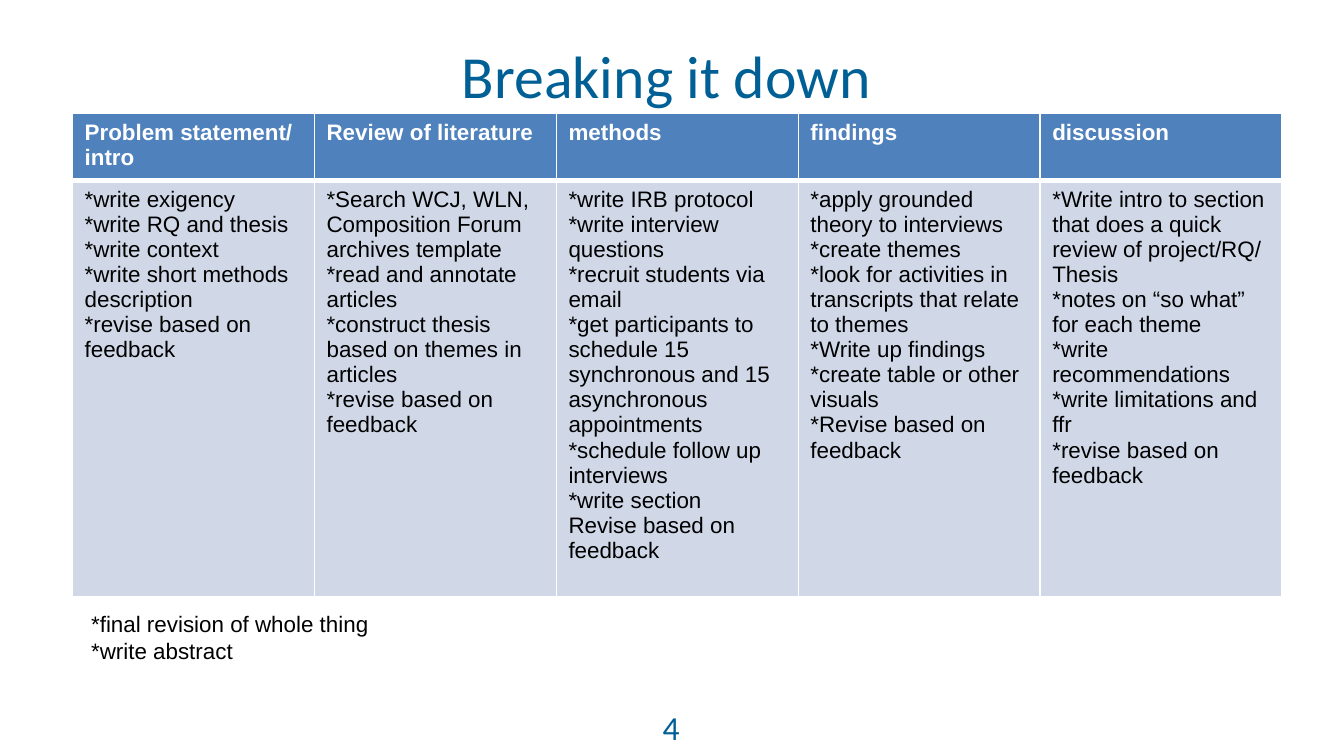
"""Build the "Breaking it down" slide with a table of writing tasks by section."""
import lxml.etree
import pptx
import pptx.dml.color
import pptx.enum.text
import pptx.oxml.ns
import pptx.util

Inches = pptx.util.Inches
COLORS = {
    "title": "006096",
    "header": "4F81BD",
    "body": "D0D8E8",
    "white": "FFFFFF",
    "black": "000000",
}
SECTIONS = [
    (["Problem statement/", "intro"],
     ["*write exigency", "*write RQ and thesis", "*write context",
      "*write short methods description", "*revise based on feedback"]),
    (["Review of literature"],
     ["*Search WCJ, WLN, Composition Forum archives template",
      "*read and annotate articles",
      "*construct thesis based on themes in articles",
      "*revise based on feedback"]),
    (["methods"],
     ["*write IRB protocol", "*write interview questions",
      "*recruit students via email",
      "*get participants to schedule 15 synchronous and 15 asynchronous appointments",
      "*schedule follow up interviews", "*write section",
      "Revise based on feedback"]),
    (["findings"],
     ["*apply grounded theory to interviews", "*create themes",
      "*look for activities in transcripts that relate to themes",
      "*Write up findings", "*create table or other visuals",
      "*Revise based on feedback"]),
    (["discussion"],
     ["*Write intro to section that does a quick review of project/RQ/", "Thesis",
      "*notes on “so what” for each theme", "*write recommendations",
      "*write limitations and ffr", "*revise based on feedback"]),
]


def write_lines(text_frame, lines, size, font_name, color, bold=False):
    text_frame.word_wrap = True
    text_frame.text = "\n".join(lines)
    for paragraph in text_frame.paragraphs:
        paragraph.font.size = pptx.util.Pt(size)
        paragraph.font.name = font_name
        paragraph.font.bold = bold
        paragraph.font.color.rgb = pptx.dml.color.RGBColor.from_string(COLORS[color])


def set_borders(cell, widths):
    properties = cell._tc.get_or_add_tcPr()
    for index, (side, width) in enumerate(widths.items()):
        line = lxml.etree.Element(pptx.oxml.ns.qn(f"a:ln{side}"), w=str(pptx.util.Pt(width)))
        fill = lxml.etree.SubElement(line, pptx.oxml.ns.qn("a:solidFill"))
        lxml.etree.SubElement(fill, pptx.oxml.ns.qn("a:srgbClr"), val=COLORS["white"])
        properties.insert(index, line)


presentation = pptx.Presentation()
presentation.slide_width = Inches(10)
presentation.slide_height = Inches(10) * 9 // 16
slide = presentation.slides.add_slide(presentation.slide_layouts[6])

title = slide.shapes.add_textbox(Inches(0.46), Inches(0.26), Inches(9), Inches(0.59))
write_lines(title.text_frame, ["Breaking it down"], 32, "Calibri", "title")
title.text_frame.vertical_anchor = pptx.enum.text.MSO_ANCHOR.MIDDLE

table = slide.shapes.add_table(
    2, len(SECTIONS), Inches(0.54), Inches(0.84), Inches(9), Inches(3.37)
).table
table.rows[0].height = Inches(0.47)
table.rows[1].height = Inches(2.9)
ROW_STYLES = [
    ("header", "white", True, {"L": 1, "R": 1, "T": 1, "B": 3}),
    ("body", "black", False, {"L": 1, "R": 1, "T": 3, "B": 1}),
]
for column, section in enumerate(SECTIONS):
    table.columns[column].width = Inches(1.8)
    for row, (fill, color, bold, borders) in enumerate(ROW_STYLES):
        cell = table.cell(row, column)
        cell.margin_left = cell.margin_right = Inches(0.09)
        cell.fill.solid()
        cell.fill.fore_color.rgb = pptx.dml.color.RGBColor.from_string(COLORS[fill])
        set_borders(cell, borders)
        write_lines(cell.text_frame, section[row], 12, "Arial", color, bold)

slide_number = slide.shapes.add_textbox(Inches(3.83), Inches(5.21), Inches(2.33), Inches(0.3))
write_lines(slide_number.text_frame, ["4"], 18, "Calibri", "title")

for shape in (title, slide_number):
    shape.text_frame.paragraphs[0].alignment = pptx.enum.text.PP_ALIGN.CENTER

final_tasks = slide.shapes.add_textbox(Inches(0.58), Inches(4.49), Inches(8.83), Inches(0.5))
write_lines(final_tasks.text_frame, ["*final revision of whole thing", "*write abstract"],
            12, "Arial", "black")

presentation.save("out.pptx")
